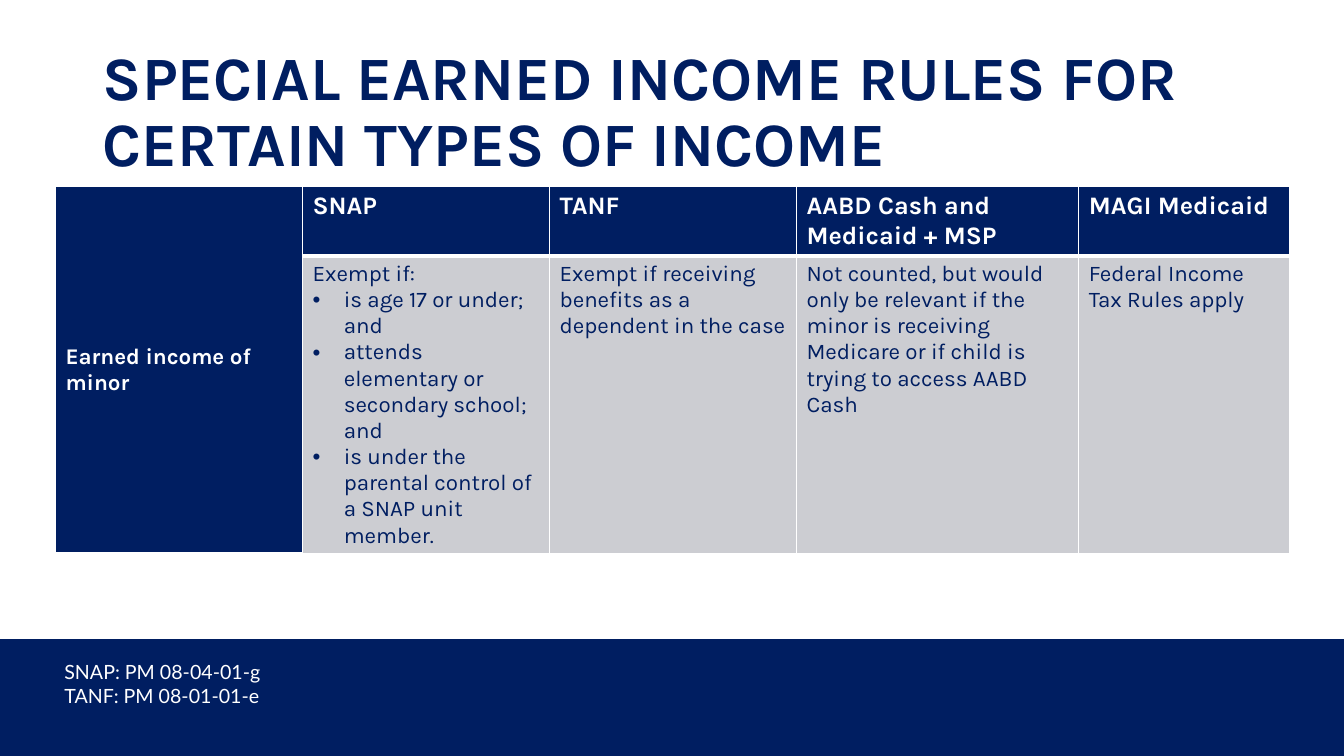
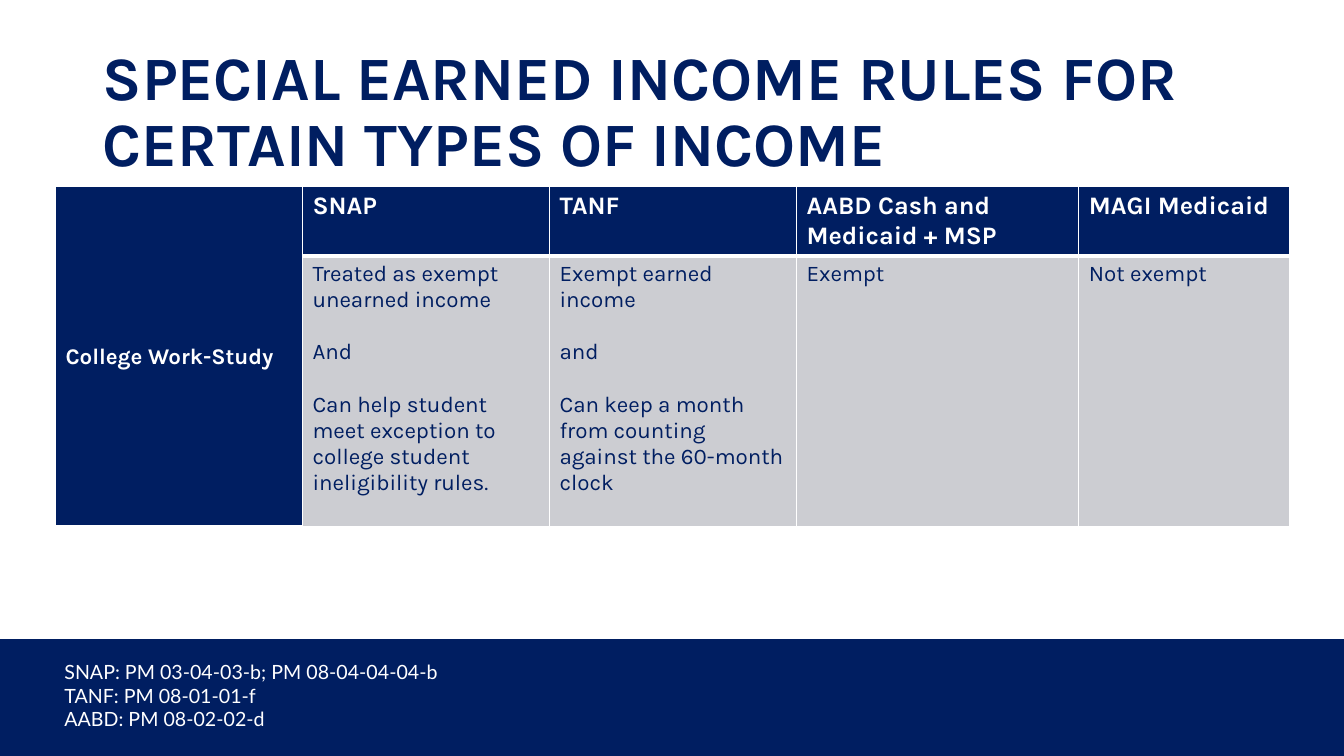
from dataclasses import dataclass

from lxml import etree
from pptx import Presentation
from pptx import util as u
from pptx.dml.color import RGBColor
from pptx.enum import shapes, text
from pptx.oxml.ns import qn

NAVY, GREY, WHITE = "001E61", "CCCDD2", "FFFFFF"
HEAD, BODY = "Karla", "Lato"
TITLE = "SPECIAL EARNED INCOME RULES FOR CERTAIN TYPES OF INCOME"
PLANS = ["SNAP", "TANF", "AABD Cash and Medicaid + MSP", "MAGI Medicaid"]
COLS = [2.45, 2.45, 2.45, 2.8, 2.09]
TOP_ROW = 0.68


@dataclass
class Rule:
    """Cell text: the first line is plain, later ones bulleted or set apart by gap."""
    lines: list[str]
    bullet: bool = False
    gap: float = 0


@dataclass
class Page:
    label: str
    rules: list[Rule]
    height: float
    notes: list[str]
    width: float


PAGES = [
    Page("Earned income of minor", [
        Rule(["Exempt if:",
              "is age 17 or under; and",
              "attends elementary or secondary school; and",
              "is under the parental control of a SNAP unit member."], bullet=True),
        Rule(["Exempt if receiving benefits as a dependent in the case"]),
        Rule(["Not counted, but would only be relevant if the minor is receiving "
              "Medicare or if child is trying to access AABD Cash"]),
        Rule(["Federal Income Tax Rules apply"]),
    ], 2.95, ["SNAP: PM 08-04-01-g", "TANF: PM 08-01-01-e"], 2.93),
    Page("College Work-Study", [
        Rule(["Treated as exempt unearned income", "And",
              "Can help student meet exception to college student "
              "ineligibility rules."], gap=18.7),
        Rule(["Exempt earned income", "and",
              "Can keep a month from counting against the 60-month clock"], gap=18.7),
        Rule(["Exempt"]),
        Rule(["Not exempt"]),
    ], 2.69, ["SNAP: PM 03-04-03-b; PM 08-04-04-04-b",
              "TANF: PM 08-01-01-f", "AABD: PM 08-02-02-d"], 4.45),
]


def color(code: str) -> RGBColor:
    return RGBColor.from_string(code)


def style(frame, size: float, code: str, face: str = HEAD, bold: bool = False) -> None:
    for para in frame.paragraphs:
        for run in para.runs:
            font = run.font
            font.size, font.name, font.bold = u.Pt(size), face, bold
            font.color.rgb = color(code)


def edge(cell, top: float, low: float) -> None:
    """White cell borders; top and low are widths in points, the sides are 1."""
    props = cell._tc.get_or_add_tcPr()
    for i, (tag, width) in enumerate([("L", 1), ("R", 1), ("T", top), ("B", low)]):
        line = etree.Element(qn(f"a:ln{tag}"), w=str(u.Pt(width)))
        fill = etree.SubElement(line, qn("a:solidFill"))
        etree.SubElement(fill, qn("a:srgbClr"), val=WHITE)
        props.insert(i, line)


def bullet(para) -> None:
    props = para._p.get_or_add_pPr()
    props.set("marL", str(u.Inches(0.31)))
    props.set("indent", str(u.Inches(-0.31)))
    etree.SubElement(props, qn("a:buFont"), typeface="Arial")
    etree.SubElement(props, qn("a:buChar"), char="•")


def paint(cell, code: str, top: float, low: float) -> None:
    cell.fill.solid()
    cell.fill.fore_color.rgb = color(code)
    edge(cell, top, low)


def add_title(slide) -> None:
    title = slide.shapes.title
    frame = title.text_frame
    frame.text = TITLE
    frame.auto_size = text.MSO_AUTO_SIZE.NONE
    frame.vertical_anchor = text.MSO_ANCHOR.MIDDLE
    para = frame.paragraphs[0]
    para.alignment, para.line_spacing = text.PP_ALIGN.LEFT, 0.9
    style(frame, 44, NAVY, bold=True)


def add_grid(slide, page: Page) -> None:
    frame = slide.shapes.add_table(
        2, len(COLS), u.Inches(0.55), u.Inches(1.85),
        u.Inches(sum(COLS)), u.Inches(TOP_ROW + page.height))
    grid = frame.table
    grid.horz_banding = False
    for col, width in zip(grid.columns, COLS):
        col.width = u.Inches(width)
    for row, height in zip(grid.rows, [TOP_ROW, page.height]):
        row.height = u.Inches(height)

    label = grid.cell(0, 0)
    label.merge(grid.cell(1, 0))
    label.text_frame.text = page.label
    label.vertical_anchor = text.MSO_ANCHOR.MIDDLE
    style(label.text_frame, 16, WHITE, bold=True)
    paint(label, NAVY, 1, 3)

    for i, (plan, rule) in enumerate(zip(PLANS, page.rules), 1):
        head, body = grid.cell(0, i), grid.cell(1, i)
        head.text_frame.text = plan
        style(head.text_frame, 18, WHITE, bold=True)
        paint(head, NAVY, 1, 3)
        body.text_frame.text = "\n".join(rule.lines)
        for para in body.text_frame.paragraphs[1:]:
            para.space_before = u.Pt(rule.gap)
            if rule.bullet:
                bullet(para)
        style(body.text_frame, 16, NAVY)
        paint(body, GREY, 3, 1)


def add_notes(slide, page: Page) -> None:
    box = slide.shapes.add_textbox(
        u.Inches(0.54), u.Inches(6.5), u.Inches(page.width), u.Inches(0.81))
    frame = box.text_frame
    frame.word_wrap = True
    frame.text = "\n".join(page.notes)
    style(frame, 14, WHITE, BODY)


def set_layout(layout, slide, width: int) -> None:
    """Place the shared title and move a band drawn on slide to the layout."""
    title = layout.placeholders[0]
    title.left, title.top = u.Inches(0.92), u.Inches(0.4)
    title.width, title.height = u.Inches(11.5), u.Inches(1.45)
    band = slide.shapes.add_shape(
        shapes.MSO_SHAPE.RECTANGLE, 0, u.Inches(6.34), width, u.Inches(1.16))
    band.shadow.inherit = False
    band.fill.solid()
    band.fill.fore_color.rgb = color(NAVY)
    band.line.fill.background()
    layout.shapes._spTree.insert(2, band._element)


def main() -> None:
    deck = Presentation()
    deck.slide_width, deck.slide_height = u.Inches(13.33), u.Inches(7.5)
    layout = deck.slide_layouts[5]
    slides = [deck.slides.add_slide(layout) for _ in PAGES]
    set_layout(layout, slides[0], deck.slide_width)
    for slide, page in zip(slides, PAGES):
        add_title(slide)
        add_grid(slide, page)
        add_notes(slide, page)
    deck.save("out.pptx")


if __name__ == "__main__":
    main()
